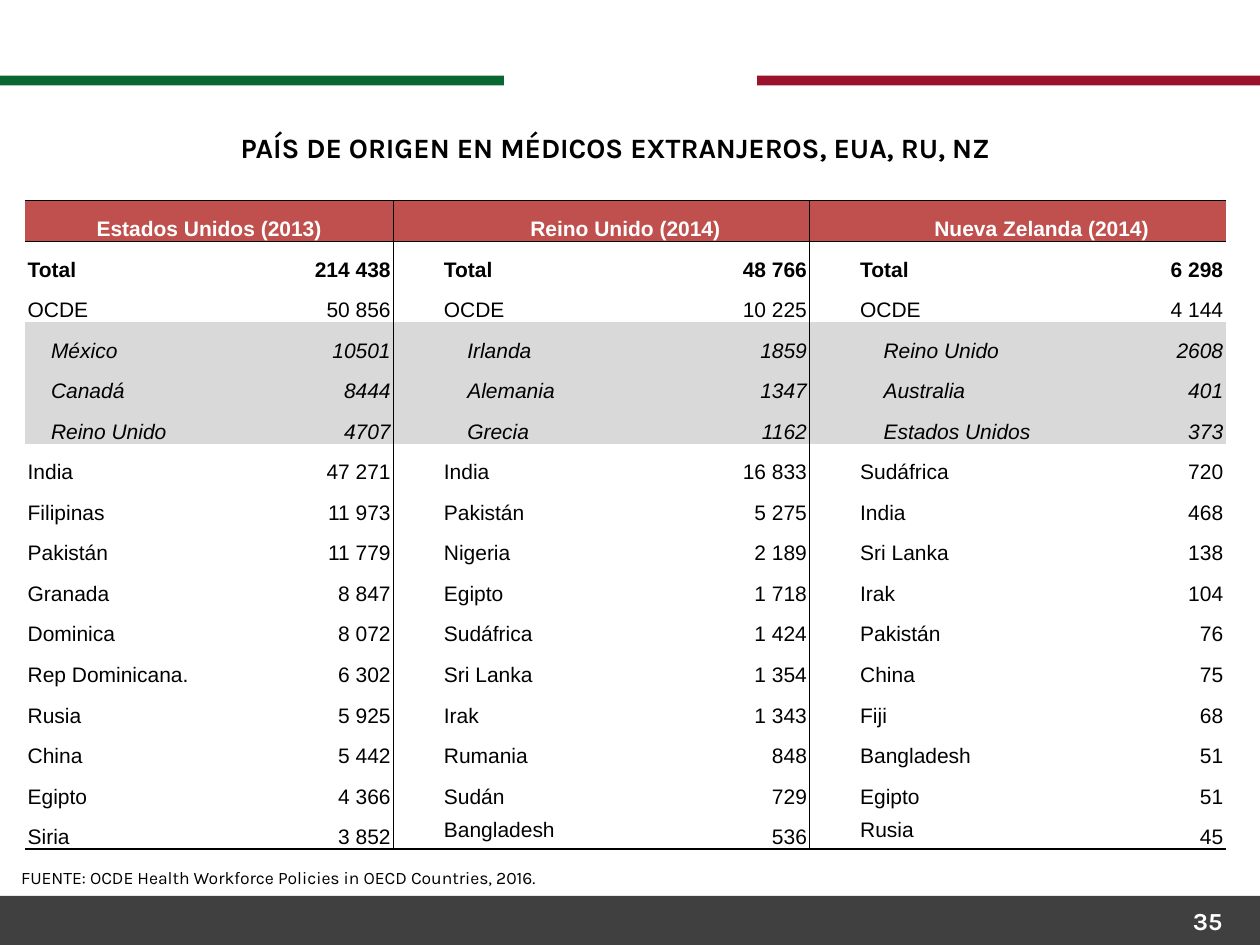
from lxml import etree
from pptx import Presentation
from pptx import util as u
from pptx.dml.color import RGBColor
from pptx.enum import shapes, text
from pptx.oxml import ns

COLORS = {"black": "000000", "white": "FFFFFF", "green": "076632", "crimson": "9B122D",
          "footer": "404040", "header": "C0504D", "highlight": "D9D9D9"}
ALIGN = text.PP_ALIGN
ANCHOR = text.MSO_ANCHOR

HEADERS = ["Estados Unidos (2013)", "Reino Unido (2014)", "Nueva Zelanda (2014)"]
# Name and number of doctors for each of the three countries
ROWS = [
    ("Total", "214 438", "Total", "48 766", "Total", "6 298"),
    ("OCDE", "50 856", "OCDE", "10 225", "OCDE", "4 144"),
    ("México", "10501", "Irlanda", "1859", "Reino Unido", "2608"),
    ("Canadá", "8444", "Alemania", "1347", "Australia", "401"),
    ("Reino Unido", "4707", "Grecia", "1162", "Estados Unidos", "373"),
    ("India", "47 271", "India", "16 833", "Sudáfrica", "720"),
    ("Filipinas", "11 973", "Pakistán", "5 275", "India", "468"),
    ("Pakistán", "11 779", "Nigeria", "2 189", "Sri Lanka", "138"),
    ("Granada", "8 847", "Egipto", "1 718", "Irak", "104"),
    ("Dominica", "8 072", "Sudáfrica", "1 424", "Pakistán", "76"),
    ("Rep Dominicana.", "6 302", "Sri Lanka", "1 354", "China", "75"),
    ("Rusia", "5 925", "Irak", "1 343", "Fiji", "68"),
    ("China", "5 442", "Rumania", "848", "Bangladesh", "51"),
    ("Egipto", "4 366", "Sudán", "729", "Egipto", "51"),
    ("Siria", "3 852", "Bangladesh", "536", "Rusia", "45"),
]
NAME_WIDTH, NUMBER_WIDTH, GAP_WIDTH = 128.2, 82.1, 27.6
WIDTHS = [NAME_WIDTH, NUMBER_WIDTH, GAP_WIDTH] * 2 + [NAME_WIDTH, NUMBER_WIDTH]
ROW_HEIGHT = 23.18
OECD_ROWS = range(3, 6)
LAST_ROW = len(ROWS)


class SlideBuilder:
    def __init__(self, slide):
        self.slide = slide
        self.heading_font = "Karla"
        self.table_font = "Arial"

    def add_text(self, paragraph, content, align, color, **formats):
        paragraph.alignment = align
        run = paragraph.add_run()
        run.text = content
        run.font.color.rgb = RGBColor.from_string(COLORS[color])
        for name, value in formats.items():
            setattr(run.font, name, value)

    def bar(self, left, top, width, height, color):
        shape = self.slide.shapes.add_shape(
            shapes.MSO_SHAPE.RECTANGLE, u.Pt(left), u.Pt(top), u.Pt(width), u.Pt(height))
        shape.shadow.inherit = False
        shape.fill.solid()
        shape.fill.fore_color.rgb = RGBColor.from_string(COLORS[color])
        shape.line.fill.background()

    def label(self, box, content, size, align=ALIGN.LEFT, color="black", bold=False,
              wrap=False, fit=text.MSO_AUTO_SIZE.NONE):
        shape = self.slide.shapes.add_textbox(*map(u.Pt, box))
        frame = shape.text_frame
        frame.word_wrap = wrap
        frame.auto_size = fit
        self.add_text(frame.paragraphs[0], content, align, color,
                      name=self.heading_font, size=u.Pt(size), bold=bold)

    def borders(self, cell, widths):
        properties = cell._tc.get_or_add_tcPr()
        for side in "LRTB":
            line = etree.SubElement(properties, ns.qn(f"a:ln{side}"))
            if side in widths:
                line.set("w", str(u.Pt(widths[side])))
                fill = etree.SubElement(line, ns.qn("a:solidFill"))
                etree.SubElement(fill, ns.qn("a:srgbClr"), val=COLORS["black"])
            else:
                etree.SubElement(line, ns.qn("a:noFill"))

    def cell(self, cell, fill, widths, indent=0, anchor=ANCHOR.BOTTOM):
        formats = {"margin_left": u.Pt(1.44 + indent), "margin_right": u.Pt(1.44),
                   "margin_top": u.Pt(1.44), "margin_bottom": 0, "vertical_anchor": anchor}
        for name, value in formats.items():
            setattr(cell, name, value)
        self.borders(cell, widths)
        if fill:
            cell.fill.solid()
            cell.fill.fore_color.rgb = RGBColor.from_string(COLORS[fill])
        else:
            cell.fill.background()

    def table(self, left, top):
        table = self.slide.shapes.add_table(
            LAST_ROW + 1, len(WIDTHS), u.Pt(left), u.Pt(top),
            u.Pt(sum(WIDTHS)), u.Pt(ROW_HEIGHT * (LAST_ROW + 1))).table
        table.first_row = table.horz_banding = False
        for column, width in zip(table.columns, WIDTHS):
            column.width = u.Pt(width)
        for row in table.rows:
            row.height = u.Pt(ROW_HEIGHT)

        # Fills, rules and margins
        for row in range(LAST_ROW + 1):
            fill = "header" if row == 0 else "highlight" if row in OECD_ROWS else None
            for column in range(len(WIDTHS)):
                widths = {}
                if row <= 1:
                    widths["T"] = 0.5
                if row in (0, LAST_ROW):
                    widths["B"] = 1 if row else 0.5
                if column in (1, 4) or row == 0 and column in (0, 3):
                    widths["R"] = 0.5
                if column in (2, 5):
                    widths["L"] = 0.5
                is_name = column % 3 == 0
                indent = 13.34 if is_name and row in OECD_ROWS else 0
                centred = row == LAST_ROW and column in (3, 6)
                self.cell(table.cell(row, column), fill, widths, indent,
                          ANCHOR.MIDDLE if centred else ANCHOR.BOTTOM)

        # Header texts, each over a name and a number column
        style = {"name": self.table_font, "size": u.Pt(12)}
        for index, header in enumerate(HEADERS):
            cell = table.cell(0, 3 * index)
            cell.merge(table.cell(0, 3 * index + 1))
            self.add_text(cell.text_frame.paragraphs[0], header, ALIGN.CENTER, "white",
                          bold=True, **style)

        # Country names and numbers
        for row, values in enumerate(ROWS, 1):
            for index, value in enumerate(values):
                country, part = divmod(index, 2)
                paragraph = table.cell(row, 3 * country + part).text_frame.paragraphs[0]
                self.add_text(paragraph, value, ALIGN.RIGHT if part else ALIGN.LEFT, "black",
                              bold=row == 1, italic=row in OECD_ROWS, **style)


def main():
    presentation = Presentation()
    presentation.slide_width, presentation.slide_height = u.Pt(720), u.Pt(540)
    builder = SlideBuilder(presentation.slides.add_slide(presentation.slide_layouts[6]))

    # Footer band and flag stripes
    builder.bar(0, 512, 721.4, 28, "footer")
    builder.bar(0, 43.2, 288, 5.6, "green")
    builder.bar(432.7, 43.2, 288, 5.6, "crimson")

    # Source, title and page number
    builder.label((5, 491.8, 332.6, 31.7),
                  "FUENTE: OCDE Health Workforce Policies in OECD Countries, 2016.", 10,
                  fit=text.MSO_AUTO_SIZE.SHAPE_TO_FIT_TEXT)
    builder.label((14.4, 71.3, 674.6, 28.1),
                  "PAÍS DE ORIGEN EN MÉDICOS EXTRANJEROS, EUA, RU, NZ", 16,
                  align=ALIGN.CENTER, bold=True)
    builder.label((537.8, 514.1, 167.8, 28.8), "35", 14, align=ALIGN.RIGHT,
                  color="white", bold=True, wrap=True)

    # Foreign doctors by country of origin
    builder.table(14.4, 114.6)
    presentation.save("out.pptx")


if __name__ == "__main__":
    main()
